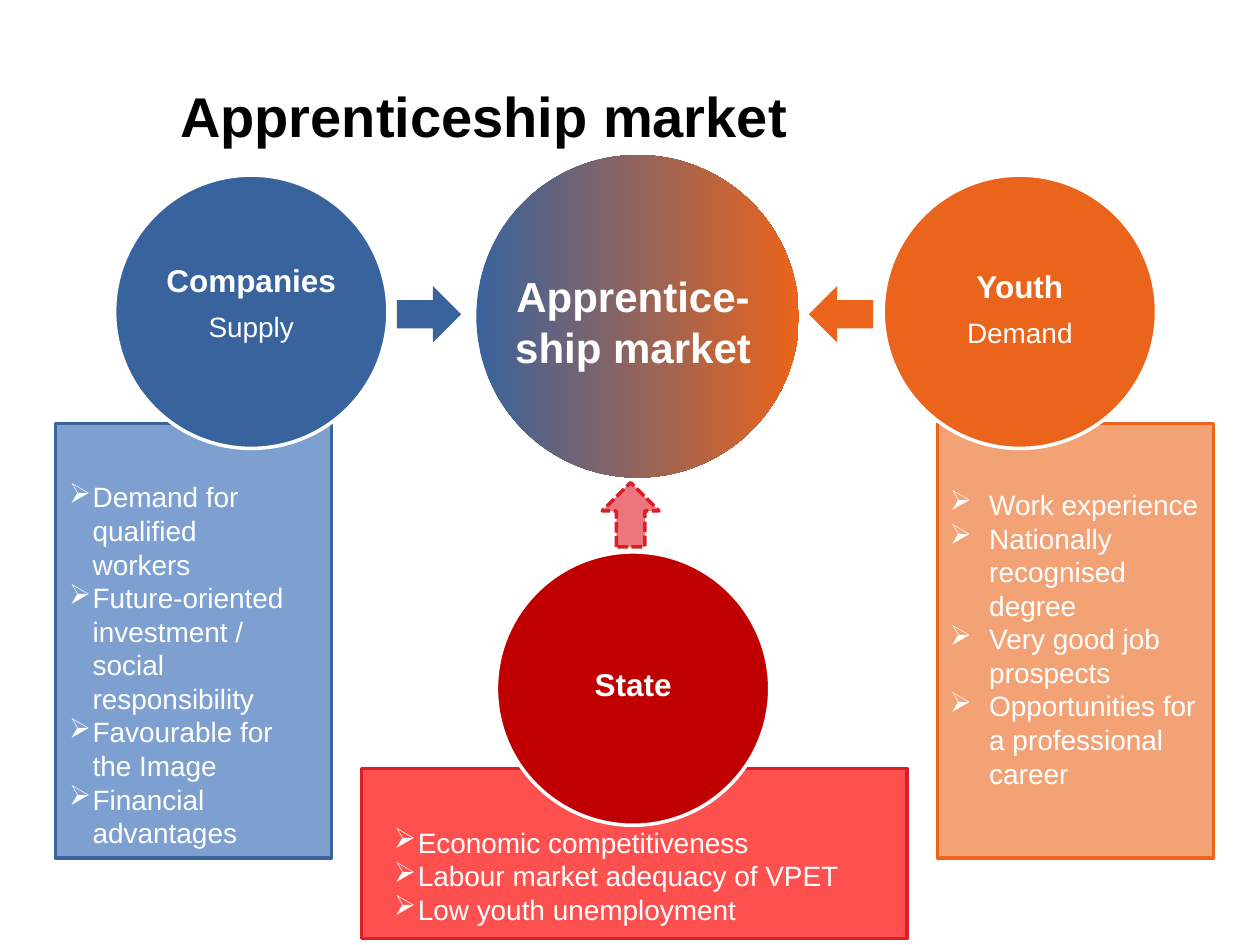
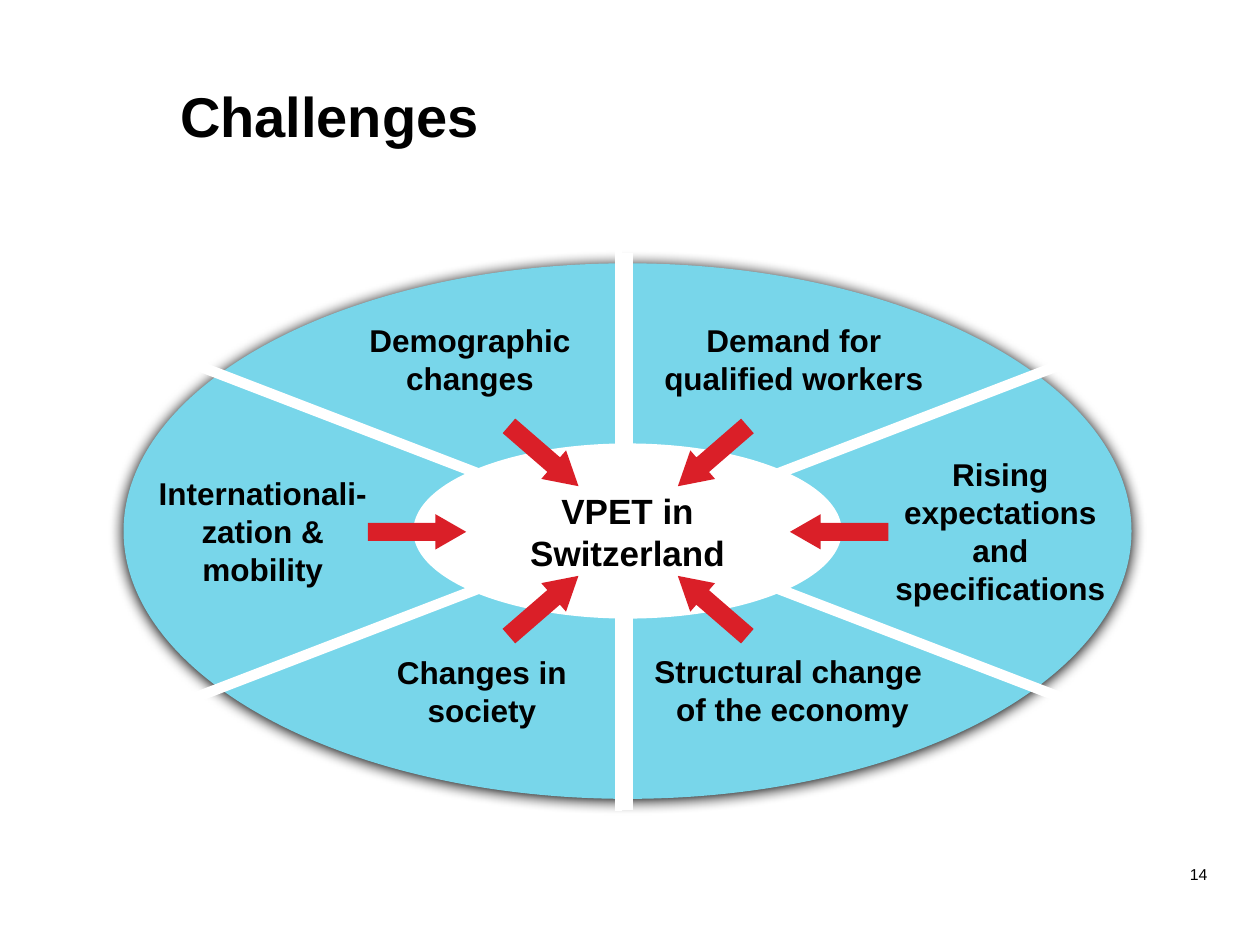
"""Build two slides on the apprenticeship market and its challenges."""
from lxml import etree
from pptx import Presentation
from pptx.dml.color import RGBColor
from pptx.enum.dml import MSO_LINE
from pptx.enum.shapes import MSO_CONNECTOR, MSO_SHAPE
from pptx.enum.text import MSO_ANCHOR, PP_ALIGN
from pptx.oxml.ns import qn
from pptx.util import Pt

OVAL, RECT, ARROW = MSO_SHAPE.OVAL, MSO_SHAPE.RECTANGLE, MSO_SHAPE.RIGHT_ARROW
LEFT, MID, RIGHT = PP_ALIGN.LEFT, PP_ALIGN.CENTER, PP_ALIGN.RIGHT
TOP, CENTER = MSO_ANCHOR.TOP, MSO_ANCHOR.MIDDLE
STRAIGHT, DASH = MSO_CONNECTOR.STRAIGHT, MSO_LINE.SQUARE_DOT

BLACK = RGBColor(0x00, 0x00, 0x00)
WHITE = RGBColor(0xFF, 0xFF, 0xFF)
BLUE = RGBColor(0x39, 0x63, 0x9D)
SKY = RGBColor(0x7D, 0xA0, 0xD0)
ORANGE = RGBColor(0xEB, 0x64, 0x1B)
PEACH = RGBColor(0xF3, 0xA2, 0x76)
RED = RGBColor(0xDA, 0x1F, 0x28)
CORAL = RGBColor(0xFF, 0x50, 0x50)
PINK = RGBColor(0xEC, 0x76, 0x7C)
WINE = RGBColor(0xC0, 0x00, 0x00)
AQUA = RGBColor(0x78, 0xD6, 0xEA)

FONT = "Arial"
TITLE = {"size": Pt(32), "bold": True}
HEAD = {"size": Pt(18), "bold": True}
BODY = {"size": Pt(16), "bold": False}
CORE = {"size": Pt(20), "bold": True}
HUB = {"size": Pt(24), "bold": True}
PAGE = {"size": Pt(9), "bold": False}
BARE = {"margin_left": 0, "margin_right": 0, "margin_top": 0, "margin_bottom": 0,
        "vertical_anchor": CENTER}
SNUG = {**BARE, "margin_left": Pt(1.4), "margin_right": Pt(1.4),
        "margin_top": Pt(1.4), "margin_bottom": Pt(1.4)}


def draw(slide, kind, box, fill=None, line=None, turn=0):
    """Add a preset shape with flat fill and an optional 2 pt line."""
    shape = slide.shapes.add_shape(kind, *map(Pt, box))
    shape.shadow.inherit = False
    shape.rotation = turn
    if fill is not None:
        shape.fill.solid()
        shape.fill.fore_color.rgb = fill
    if line is None:
        shape.line.fill.background()
    else:
        shape.line.color.rgb = line
        shape.line.width = Pt(2)
    return shape


def write(slide, box, rows, color=BLACK, frame=None, para=None, indent=0):
    """Add a text box with one paragraph per (text, font format) row."""
    body = slide.shapes.add_textbox(*map(Pt, box)).text_frame
    for key, val in {"word_wrap": True, **(frame or {})}.items():
        setattr(body, key, val)
    for num, (text, form) in enumerate(rows):
        item = body.add_paragraph() if num else body.paragraphs[0]
        for key, val in (para or {}).items():
            setattr(item, key, val)
        run = item.add_run()
        run.text = text
        run.font.color.rgb = color
        for key, val in {"name": FONT, **form}.items():
            setattr(run.font, key, val)
        if indent:
            props = item._p.get_or_add_pPr()
            props.set("marL", str(Pt(indent)))
            props.set("indent", str(-Pt(indent)))
            etree.SubElement(props, qn("a:buChar"), char="➢")


deck = Presentation()
deck.slide_width, deck.slide_height = Pt(720), Pt(540)
slides = []
for name in ("Apprenticeship market", "Challenges"):
    slide = deck.slides.add_slide(deck.slide_layouts[6])
    write(slide, (95.8, 39.6, 495.4, 56.2), [(name, TITLE)], frame={"margin_top": Pt(7)})
    slides.append(slide)
market, trends = slides

for box, fill, line in (
    ((206.6, 439.2, 311.8, 97.2), CORAL, RED),
    ((535.7, 241.9, 157.7, 248.4), PEACH, ORANGE),
    ((31.7, 241.9, 157.7, 248.4), SKY, BLUE),
):
    draw(market, RECT, box, fill, line)

hub = draw(market, OVAL, (272.2, 88.6, 184.3, 184.3))
hub.fill.gradient()
hub.fill.gradient_angle = 0
for stop, color in zip(hub.fill.gradient_stops, (BLUE, ORANGE)):
    stop.color.rgb = color
write(market, (283.7, 151.2, 156.2, 65.5), [("Apprentice-ship market", HUB)],
      WHITE, para={"alignment": MID})

DISC = 156.2
for left, top, fill, low, high, rows in (
    (65.5, 100.1, BLUE, 118.8, 110.2, [("Companies", HEAD), ("Supply", BODY)]),
    (504.7, 100.1, ORANGE, 122.4, 110.2, [("Youth", HEAD), ("Demand", BODY)]),
    (283.7, 315.4, WINE, 346.3, 92.2, [("State", HEAD)]),
):
    draw(market, OVAL, (left, top, DISC, DISC), fill, WHITE)
    write(market, (left, low, DISC, high), rows, WHITE, SNUG,
          {"alignment": MID, "line_spacing": 0.9, "space_after": Pt(8)})

for left, top, turn, fill, line in (
    (226.8, 163.4, 0, BLUE, None),
    (462.2, 163.4, 180, ORANGE, None),
    (342, 277.9, 270, PINK, RED),
):
    arrow = draw(market, ARROW, (left, top, 36.7, 32.4), fill, line, turn)
    if line is not None:
        arrow.line.dash_style = DASH

for box, indent, inset, items in (
    ((535.7, 270, 157.7, 227.5), 22.5, 8.6,
     ("Work experience", "Nationally recognised degree", "Very good job prospects",
      "Opportunities for a professional career")),
    ((32.4, 270.7, 146.2, 220.3), 13.5, 3.6,
     ("Demand for qualified workers", "Future-oriented investment / social responsibility",
      "Favourable for the Image", "Financial advantages")),
    ((218.2, 468, 311.8, 65.5), 13.5, 3.6,
     ("Economic competitiveness", "Labour market adequacy of VPET",
      "Low youth unemployment")),
):
    write(market, box, [(item, BODY) for item in items], WHITE,
          {"margin_top": Pt(inset)}, {"alignment": LEFT}, indent)

ring = draw(trends, OVAL, (70.6, 150.5, 576, 306), AQUA)
glow = etree.SubElement(ring._element.spPr.find(qn("a:effectLst")), qn("a:outerShdw"),
                        blurRad=str(Pt(8.5)), dist=str(Pt(1)), dir="5400000",
                        algn="ctr", rotWithShape="0")
etree.SubElement(glow, qn("a:srgbClr"), val=str(BLACK))
draw(trends, OVAL, (236.2, 253.4, 244.8, 100.1), WHITE)

for ends, width in (
    ((358.6, 144.7, 358.6, 463), 6),
    ((101.5, 204.5, 616.3, 402.5), 6),
    ((101.5, 402.5, 616.3, 204.5), 6),
    ((353.5, 141.1, 353.5, 463.7), 3.75),
):
    line = trends.shapes.add_connector(STRAIGHT, *map(Pt, ends))
    line.line.color.rgb = WHITE
    line.line.width = Pt(width)
    etree.SubElement(line._element.spPr, qn("a:effectLst"))

SLANT, FLAT = (52.6, 21.6), (56.2, 20.2)
for left, top, size, turn in (
    (284.4, 249.8, SLANT, 40.9),
    (380.9, 249.8, SLANT, 139.1),
    (284.4, 335.5, SLANT, 319.1),
    (380.9, 335.5, SLANT, 220.9),
    (451.4, 293.8, FLAT, 180),
    (210.2, 293.8, FLAT, 0),
):
    arrow = draw(trends, ARROW, (left, top, *size), RED, turn=turn)
    arrow.adjustments[0], arrow.adjustments[1] = 0.51, 0.87

for box, form, lines in (
    ((198.7, 182.9, 139.7, 43.9), HEAD, ["Demographic changes"]),
    ((371.5, 182.9, 164.2, 43.9), HEAD, ["Demand for qualified workers"]),
    ((197.3, 373, 156.2, 43.9), HEAD, ["Changes in society"]),
    ((501.8, 259.9, 139.7, 87.1), HEAD, ["Rising expectations and specifications"]),
    ((82.1, 270.7, 136.1, 65.5), HEAD, ["Internationali-zation & mobility"]),
    ((265.7, 279.4, 185.8, 48.2), CORE, ["VPET in Switzerland"]),
    ((360, 372.2, 185.8, 43.9), HEAD, ["Structural change ", "of the economy"]),
):
    write(trends, box, [(text, form) for text in lines], frame=BARE,
          para={"alignment": MID})

write(trends, (521.3, 489.6, 175.7, 28.8), [("14", PAGE)],
      para={"alignment": RIGHT, "line_spacing": Pt(12)})

deck.save("out.pptx")
